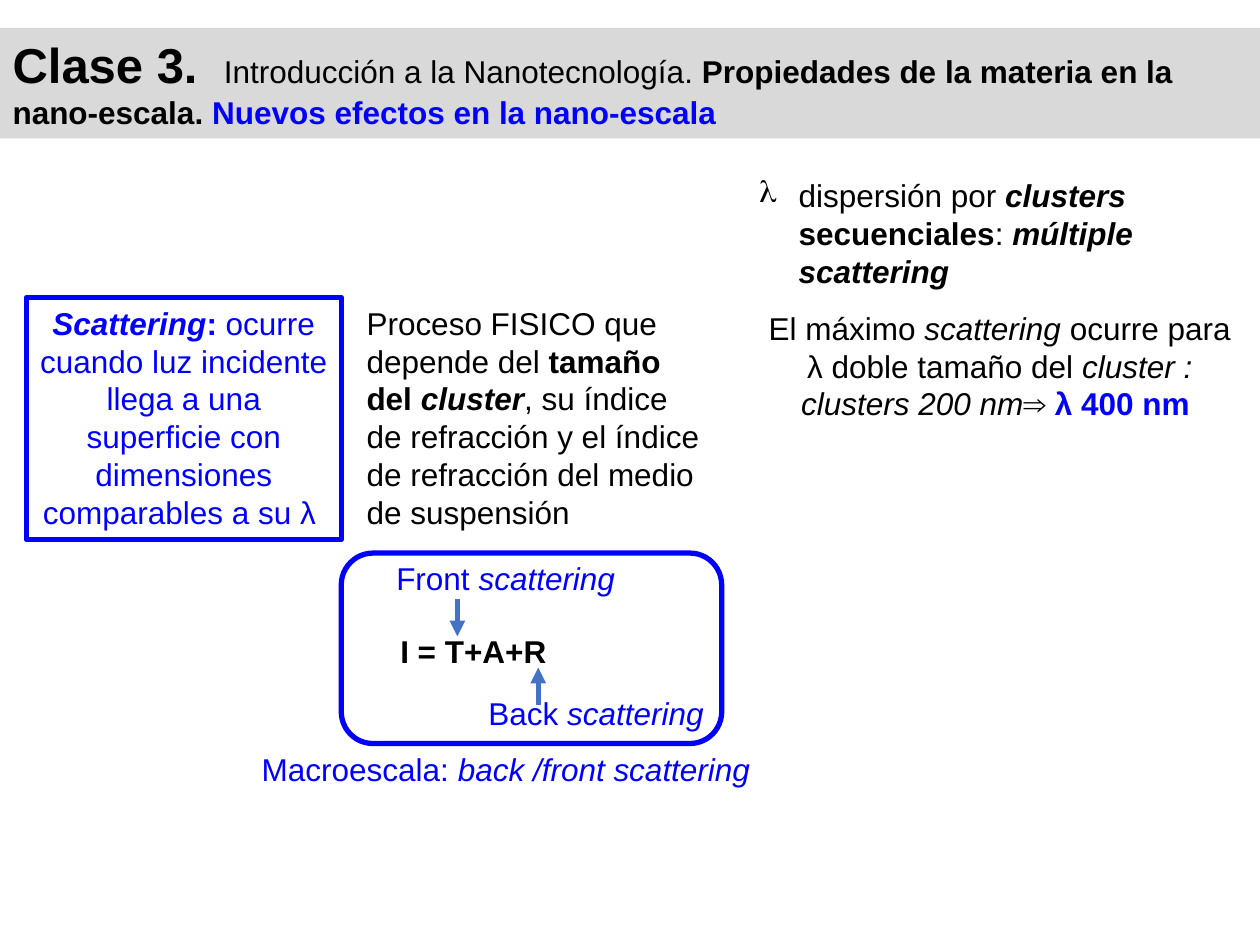
import dataclasses

import pptx
import pptx.dml.color
import pptx.enum.shapes
import pptx.enum.text
import pptx.oxml.ns
import pptx.util
from lxml import etree

Cm = pptx.util.Cm
Pt = pptx.util.Pt
LEFT = pptx.enum.text.PP_ALIGN.LEFT
MID = pptx.enum.text.PP_ALIGN.CENTER
SHAPES = pptx.enum.shapes.MSO_SHAPE


@dataclasses.dataclass(frozen=True)
class Theme:
    font: str = "Arial"
    size: int = 18
    large: int = 28
    line: int = 3
    black: str = "000000"
    blue: str = "0000FF"
    steel: str = "4472C4"
    grey: str = "D9D9D9"


def tint(code):
    return pptx.dml.color.RGBColor.from_string(code)


def add_node(parent, tag, **attrs):
    return etree.SubElement(parent, pptx.oxml.ns.qn(tag), **attrs)


class Page:
    def __init__(self, deck, theme):
        self.theme = theme
        self.slide = deck.slides.add_slide(deck.slide_layouts[5])

    def set_text(self, shape, paras, color, align):
        """Fill a shape with paragraphs of (text, marks[, color[, size]]) runs.

        Marks hold b for bold and i for italic.
        """
        frame = shape.text_frame
        frame.word_wrap = True
        frame.auto_size = pptx.enum.text.MSO_AUTO_SIZE.SHAPE_TO_FIT_TEXT
        frame.vertical_anchor = pptx.enum.text.MSO_ANCHOR.TOP
        for index, runs in enumerate(paras):
            para = frame.add_paragraph() if index else frame.paragraphs[0]
            para.alignment = align
            for text, marks, *rest in runs:
                shade, size = rest + [color, self.theme.size][len(rest):]
                run = para.add_run()
                run.text = text
                run.font.name = self.theme.font
                run.font.size = Pt(size)
                run.font.bold = "b" in marks
                run.font.italic = "i" in marks
                run.font.color.rgb = tint(shade)

    def title(self, box, runs, stop):
        """Set the title on a grey band, with one tab stop."""
        shape = self.slide.shapes.title
        shape.left, shape.top, shape.width, shape.height = map(Cm, box)
        shape.fill.solid()
        shape.fill.fore_color.rgb = tint(self.theme.grey)
        self.set_text(shape, [runs], self.theme.black, LEFT)
        props = shape.text_frame.paragraphs[0]._p.get_or_add_pPr()
        tabs = add_node(props, "a:tabLst")
        add_node(tabs, "a:tab", pos=str(Cm(stop)), algn="l")

    def text(self, box, paras, color, align=LEFT):
        shape = self.slide.shapes.add_textbox(*map(Cm, box))
        self.set_text(shape, paras, color, align)
        return shape

    def item(self, box, runs, color, mark, indent):
        """Add a text box whose paragraph hangs from a bullet mark."""
        shape = self.text(box, [runs], color)
        props = shape.text_frame.paragraphs[0]._p.get_or_add_pPr()
        props.set("marL", str(Cm(indent)))
        props.set("indent", str(-Cm(indent)))
        add_node(props, "a:buChar", char=mark)

    def frame(self, box, kind):
        shape = self.slide.shapes.add_shape(kind, *map(Cm, box))
        shape.shadow.inherit = False
        shape.fill.background()
        shape.line.color.rgb = tint(self.theme.blue)
        shape.line.width = Pt(self.theme.line)
        return shape

    def arrow(self, x, start, end):
        link = self.slide.shapes.add_connector(
            pptx.enum.shapes.MSO_CONNECTOR.STRAIGHT,
            Cm(x), Cm(start), Cm(x), Cm(end))
        link.line.color.rgb = tint(self.theme.steel)
        link.line.width = Pt(self.theme.line)
        add_node(link.line._get_or_add_ln(), "a:tailEnd", type="triangle")
        add_node(link._element.spPr, "a:effectLst")


def main():
    deck = pptx.Presentation()
    deck.slide_width, deck.slide_height = Cm(25.4), Cm(19.05)
    theme = Theme()
    black, blue = theme.black, theme.blue
    page = Page(deck, theme)

    page.title((0, 0.56, 25.4, 2.23), [
        ("Clase 3.\t", "b", black, theme.large),
        ("Introducción a la Nanotecnología. ", ""),
        ("Propiedades de la materia en la nano-escala. ", "b"),
        ("Nuevos efectos en la nano-escala", "b", blue)], stop=4.26)

    cause = page.frame((0.53, 6, 6.35, 4.88), SHAPES.RECTANGLE)
    page.set_text(cause, [[
        ("Scattering", "bi"), (":", "b"),
        (" ocurre cuando luz incidente llega a una superficie con "
         "dimensiones comparables a su λ ", "")]], blue, MID)
    page.text((7.14, 6, 7.4, 4.88), [[
        ("Proceso FISICO que depende del ", ""),
        ("tamaño del ", "b"), ("cluster", "bi"),
        (", su índice de refracción y el índice de refracción "
         "del medio de suspensión", "")]], black)

    page.item((15.06, 3.43, 10.34, 2.57), [
        ("dispersión por ", ""), ("clusters ", "bi"),
        ("secuenciales", "b"), (": ", ""),
        ("múltiple scattering", "bi")], black, mark="λ", indent=0.79)
    page.text((15.06, 6.1, 10.19, 2.57), [
        [("El máximo ", ""), ("scattering", "i"),
         (" ocurre para λ doble tamaño del ", ""), ("cluster :", "i")],
        [("clusters 200 nm⇒ ", "i"), ("λ 400 nm ", "b", blue)]],
        black, MID)

    page.frame((6.88, 11.15, 7.67, 3.84), SHAPES.ROUNDED_RECTANGLE)
    page.text((7.82, 12.62, 3.76, 1.02), [[("I = T+A+R", "b")]], black)
    labels = [("Front ", "scattering", 7.54, 11.15, 5.31),
              ("Back ", "scattering", 9.22, 13.87, 5.59),
              ("Macroescala: ", "back /front scattering", 4.7, 14.99, 11)]
    for plain, slant, left, top, width in labels:
        page.text((left, top, width, 1.02),
                  [[(plain, ""), (slant, "i")]], blue, MID)
    page.arrow(9.22, 12.07, 12.83)
    page.arrow(10.85, 14.22, 13.46)

    deck.save("out.pptx")


if __name__ == "__main__":
    main()
